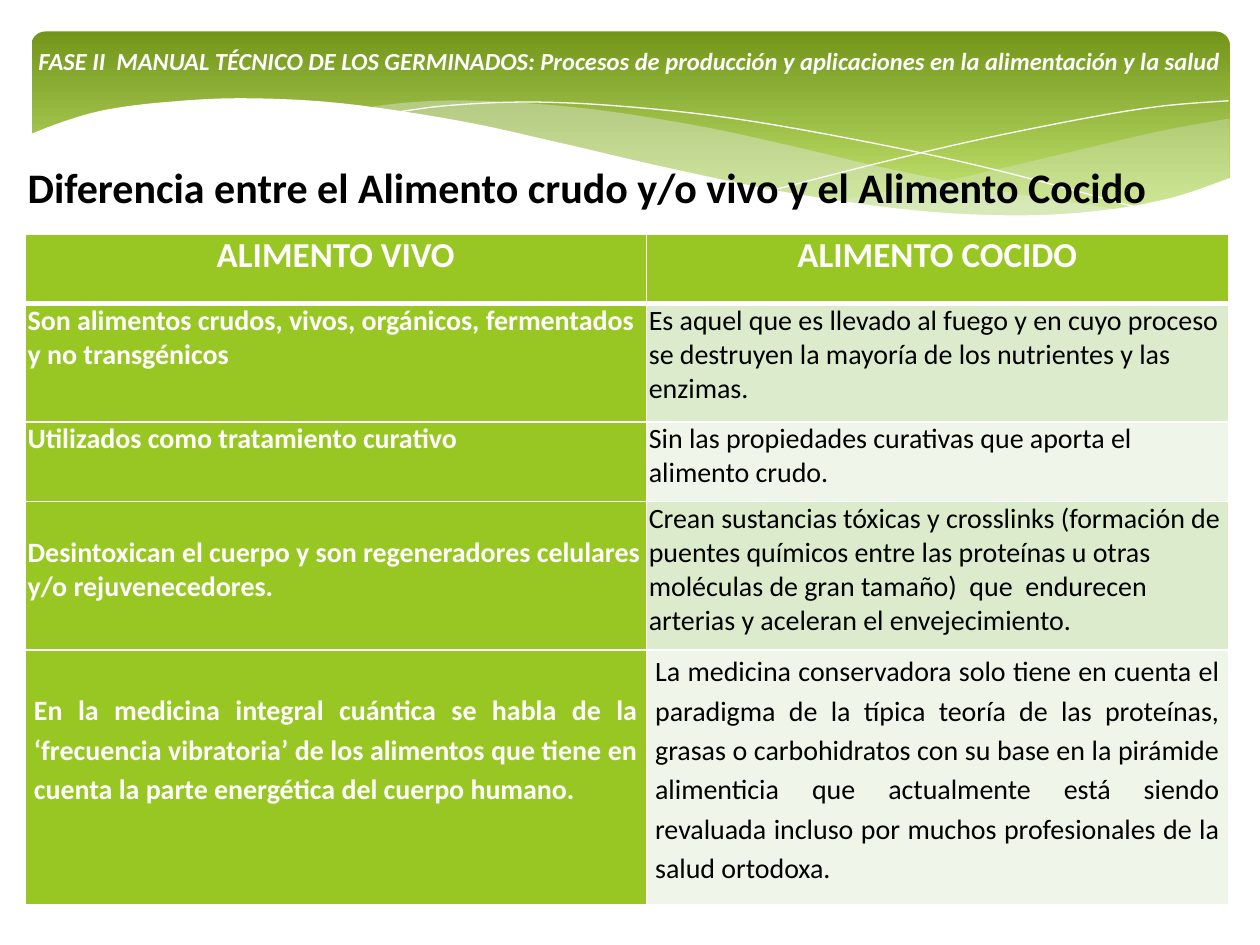
from dataclasses import dataclass

from lxml.etree import SubElement
from pptx import Presentation
from pptx.dml.color import RGBColor
from pptx.enum.shapes import MSO_SHAPE as Shape
from pptx.enum.text import MSO_ANCHOR as Anchor, PP_ALIGN as Align
from pptx.oxml.ns import qn
from pptx.util import Inches, Pt

COLUMNS, ROWS = 100, 75  # slide grid of 0.1 inch squares


@dataclass(frozen=True)
class Theme:
    font: str = "Calibri"
    white: str = "FFFFFF"
    black: str = "000000"
    green: str = "98C723"
    bands: tuple = ("DDEBCD", "EFF5E8")
    gradient: tuple = ((0, "72951A"), (0.9, "C5E672"))
    mist: str = "E7ECED"
    banner_size: int = 14
    title_size: int = 24
    header_size: int = 20
    body_size: int = 16


def write_text(frame, text, font, size, color, bold=False, italic=False,
               align=Align.LEFT, line_spacing=None):
    frame.word_wrap = True
    paragraph = frame.paragraphs[0]
    paragraph.text = text
    paragraph.alignment = align
    if line_spacing:
        paragraph.line_spacing = line_spacing
    style = paragraph.font
    style.name, style.size = font, Pt(size)
    style.bold, style.italic = bold, italic
    style.color.rgb = RGBColor.from_string(color)


def smooth(knots, steps=6):
    """Return points of a Catmull-Rom curve that passes through the knots."""
    padded = [knots[0], *knots, knots[-1]]
    points = [knots[0]]
    for a, b, c, d in zip(padded, padded[1:], padded[2:], padded[3:]):
        for step in range(1, steps + 1):
            t = step / steps
            points.append(tuple(
                (2 * q + (r - p) * t + (2 * p - 5 * q + 4 * r - s) * t ** 2
                 + (3 * q - p - 3 * r + s) * t ** 3) / 2
                for p, q, r, s in zip(a, b, c, d)))
    return points


def set_border(cell, side, color, width):
    line = SubElement(cell._tc.get_or_add_tcPr(), qn(f"a:ln{side}"), w=str(Pt(width)))
    SubElement(SubElement(line, qn("a:solidFill")), qn("a:srgbClr"), val=color)


class SlideBuilder:
    def __init__(self, presentation, theme):
        self.theme = theme
        self.slide = presentation.slides.add_slide(presentation.slide_layouts[6])
        self.unit_x = presentation.slide_width / COLUMNS
        self.unit_y = presentation.slide_height / ROWS

    def place(self, column, row):
        return round(column * self.unit_x), round(row * self.unit_y)

    def box(self, column, row, width, height):
        return *self.place(column, row), *self.place(width, height)

    def banner(self, area, corner):
        shape = self.slide.shapes.add_shape(Shape.ROUNDED_RECTANGLE, *self.box(*area))
        shape.shadow.inherit = False
        shape.adjustments[0] = corner
        shape.line.fill.background()
        shape.fill.gradient()
        shape.fill.gradient_angle = 270
        for stop, (position, color) in zip(shape.fill.gradient_stops, self.theme.gradient):
            stop.position = position
            stop.color.rgb = RGBColor.from_string(color)

    def outline(self, points, closed):
        start, *rest = [self.place(*point) for point in points]
        builder = self.slide.shapes.build_freeform(*start)
        builder.add_line_segments(rest, close=closed)
        shape = builder.convert_to_shape()
        shape.shadow.inherit = False
        return shape

    def wave(self, *edges, color, opacity=100):
        """Fill the area enclosed by a chain of smooth edges."""
        points = [point for edge in edges for point in smooth(edge)]
        shape = self.outline(points, closed=True)
        shape.line.fill.background()
        shape.fill.solid()
        shape.fill.fore_color.rgb = RGBColor.from_string(color)
        if opacity < 100:
            solid = shape.fill._xPr.find(qn("a:solidFill"))
            SubElement(solid[0], qn("a:alpha"), val=str(opacity * 1000))

    def hairline(self, knots):
        shape = self.outline(smooth(knots), closed=False)
        shape.fill.background()
        shape.line.color.rgb = RGBColor.from_string(self.theme.white)
        shape.line.width = Pt(0)

    def text(self, area, text, anchor=Anchor.TOP, **style):
        frame = self.slide.shapes.add_textbox(*self.box(*area)).text_frame
        frame.vertical_anchor = anchor
        write_text(frame, text, self.theme.font, **style)

    def cell(self, cell, text, fill, inset, top, borders, **style):
        cell.margin_left = cell.margin_right = Inches(inset)
        cell.margin_top, cell.margin_bottom = Inches(top), 0
        write_text(cell.text_frame, text, self.theme.font, **style)
        for side, width in borders.items():
            set_border(cell, side, self.theme.white, width)
        cell.fill.solid()
        cell.fill.fore_color.rgb = RGBColor.from_string(fill)

    def table(self, area, widths, heights, header, rows):
        """Each row is (left text, right text, left top margin, cell format)."""
        theme = self.theme
        table = self.slide.shapes.add_table(
            len(heights), len(widths), *self.box(*area)).table
        table.horz_banding = False
        for column, width in zip(table.columns, widths):
            column.width = self.place(width, 0)[0]
        for row, height in zip(table.rows, heights):
            row.height = self.place(0, height)[1]
        for index, text in enumerate(header):
            self.cell(table.cell(0, index), text, theme.green, 0.02, 0,
                      dict(L=1, R=1, T=1, B=3), size=theme.header_size,
                      color=theme.white, bold=True, align=Align.CENTER)
        for number, (left, right, left_top, layout) in enumerate(rows, 1):
            borders = dict(L=1, R=1, T=3 if number == 1 else 1, B=1)
            layout = {"inset": 0.02, **layout}
            self.cell(table.cell(number, 0), left, theme.green, top=left_top,
                      borders=borders, size=theme.body_size, color=theme.white,
                      bold=True, **layout)
            self.cell(table.cell(number, 1), right, theme.bands[(number - 1) % 2],
                      top=0, borders=borders, size=theme.body_size,
                      color=theme.black, **layout)


HEADER = ("ALIMENTO VIVO", "ALIMENTO COCIDO")
COMPARISON = [
    ("Son alimentos crudos, vivos, orgánicos, fermentados y no transgénicos",
     "Es aquel que es llevado al fuego y en cuyo proceso se destruyen la mayoría "
     "de los nutrientes y las enzimas.", 0, {}),
    ("Utilizados como tratamiento curativo",
     "Sin las propiedades curativas que aporta el alimento crudo.", 0, {}),
    ("Desintoxican el cuerpo y son regeneradores celulares y/o rejuvenecedores.",
     "Crean sustancias tóxicas y crosslinks (formación de puentes químicos entre las "
     "proteínas u otras moléculas de gran tamaño)  que  endurecen arterias y aceleran "
     "el envejecimiento.", 0.27, {}),
    ("En la medicina integral cuántica se habla de la ‘frecuencia vibratoria’ de los "
     "alimentos que tiene en cuenta la parte energética del cuerpo humano.",
     "La medicina conservadora solo tiene en cuenta el paradigma de la típica teoría de "
     "las proteínas, grasas o carbohidratos con su base en la pirámide alimenticia que "
     "actualmente está siendo revaluada incluso por muchos profesionales de la salud "
     "ortodoxa.", 0.31, dict(inset=0.07, align=Align.JUSTIFY, line_spacing=1.15)),
]


def main():
    presentation = Presentation()
    presentation.slide_width, presentation.slide_height = Inches(10), Inches(7.5)
    theme = Theme()
    builder = SlideBuilder(presentation, theme)

    builder.banner((2.5, 2.5, 95.1, 15.6), corner=0.07)
    builder.wave(
        [(97.6, 9.4), (92.1, 10.4), (86.1, 11.8), (75.3, 14.3), (66.1, 16)],
        [(66.1, 16), (75.7, 17), (83.5, 17.2), (90.5, 16.3), (94.9, 15.2), (97.6, 14.1)],
        color=theme.mist, opacity=29)
    builder.wave(
        [(89.3, 16.7), (80.7, 15.4), (70.6, 13.4), (62.9, 11.6), (55.5, 10),
         (46.5, 8.6), (38, 8), (32.8, 8.1), (28.6, 8.6)],
        [(28.6, 8.6), (36.2, 9.7), (44.9, 11.6), (56.6, 14.3), (66.5, 16.1),
         (74.8, 17), (81.8, 17.3), (89.3, 16.7)],
        color=theme.mist, opacity=40)
    builder.hairline([(30.9, 9), (35.3, 8.4), (41.6, 8.1), (48.9, 8.4), (58.2, 9.4),
                      (69.5, 11.4), (79.5, 13.6), (90.7, 16.6)])
    builder.hairline([(61.3, 15.1), (69.5, 13), (77.6, 11.1), (86.6, 9.3),
                      (92.4, 8.4), (97.5, 8)])
    builder.wave(
        [(97.7, 14.1), (93, 15.7), (87.5, 16.7), (80.9, 17.1), (72.6, 16.7),
         (62.6, 15.3), (52.9, 13.3), (44.7, 11.4), (36.5, 9.6), (27.1, 8.2),
         (19.3, 7.8), (13.2, 8.1), (8.5, 8.7), (5.2, 9.6), (2.3, 10.7)],
        [(2.3, 22.4), (97.7, 22.4)], color=theme.white)

    builder.text((0, 1.3, 100, 7.1),
                 "FASE II  MANUAL TÉCNICO DE LOS GERMINADOS: Procesos de producción y "
                 "aplicaciones en la alimentación y la salud",
                 anchor=Anchor.MIDDLE, size=theme.banner_size, color=theme.white,
                 bold=True, italic=True, align=Align.CENTER)
    builder.text((1.2, 12.3, 96.9, 5),
                 "Diferencia entre el Alimento crudo y/o vivo y el Alimento Cocido",
                 size=theme.title_size, color=theme.black, bold=True, align=Align.JUSTIFY)
    builder.table((2, 18.6, 95.5, 53.2), widths=(49.3, 46.2),
                  heights=(5.5, 9.4, 6.3, 11.8, 20.2), header=HEADER, rows=COMPARISON)
    presentation.save("out.pptx")


if __name__ == "__main__":
    main()
